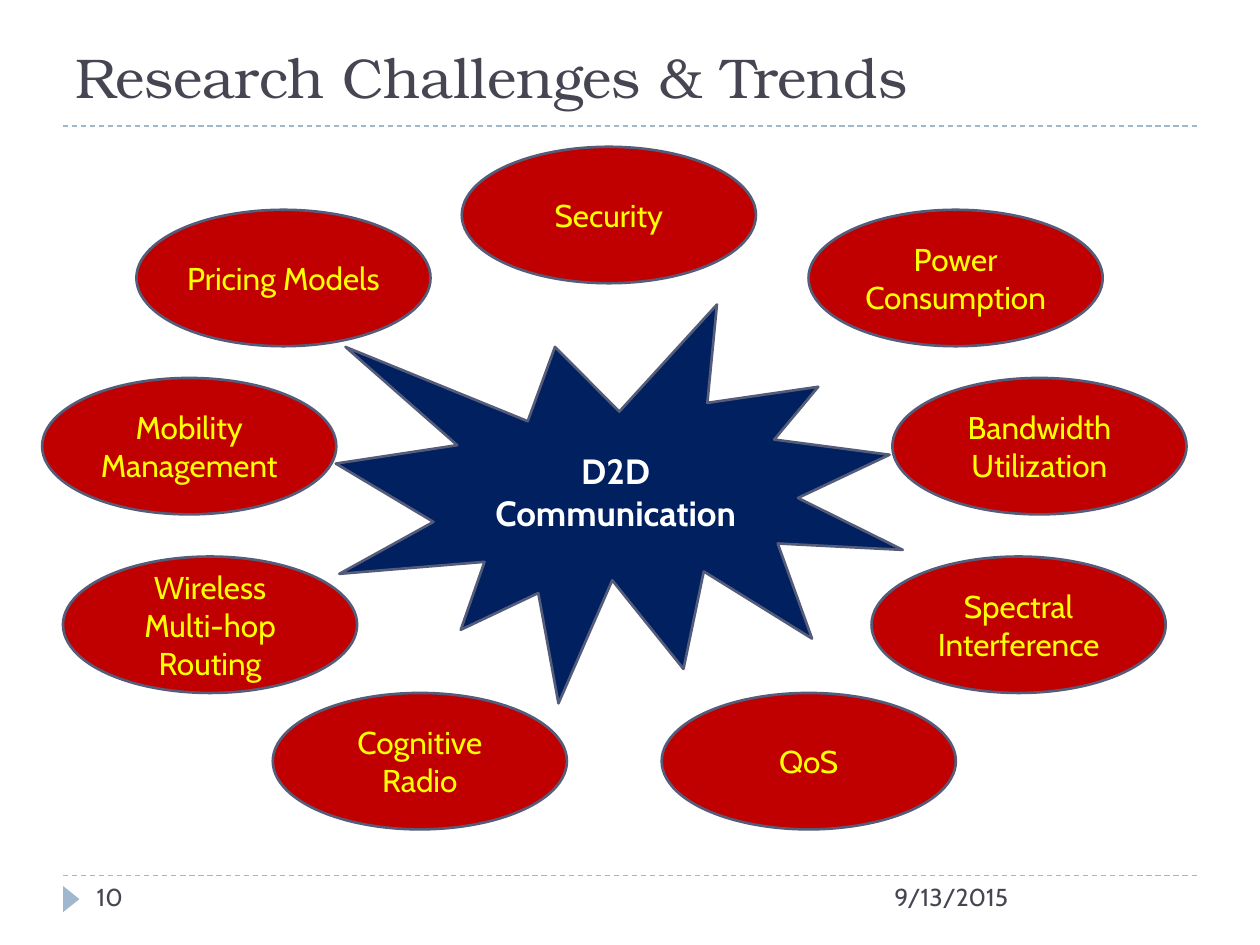
import pptx
import pptx.dml.color
import pptx.enum.dml
import pptx.enum.shapes
import pptx.enum.text
import pptx.oxml.ns
import pptx.util
from lxml import etree

Cm, Pt = pptx.util.Cm, pptx.util.Pt
SHAPE = pptx.enum.shapes.MSO_SHAPE
ANCHOR = pptx.enum.text.MSO_ANCHOR
ALIGN = pptx.enum.text.PP_ALIGN

COLORS = {
    "ink": "464653", "accent": "9FB8CD", "outline": "545C79",
    "navy": "002060", "red": "C00000", "yellow": "FFFF00", "white": "FFFFFF",
}

# Text formats
TITLE = {"name": "TeX Gyre Bonum", "size": Pt(32), "color": "ink"}
FOOTER = {"name": "Cabin", "size": Pt(14), "color": "ink"}
CENTER = {"name": "Cabin", "size": Pt(20), "bold": True, "color": "white"}
TOPIC = {"name": "Cabin", "size": Pt(18), "color": "yellow"}

OVAL_W, OVAL_H = 5.93, 2.75

# Topic, left, top, side inset (cm)
TOPICS = [
    ("Mobility Management", 0.85, 7.62, 0),
    ("Pricing Models", 2.75, 4.23, 0),
    ("Power Consumption", 16.3, 4.23, 0),
    ("Bandwidth Utilization", 17.99, 7.62, 0.25),
    ("Wireless Multi-hop Routing", 1.27, 11.22, 0.25),
    ("Cognitive Radio", 5.5, 13.97, 0.25),
    ("QoS", 13.34, 13.97, 0.25),
    ("Spectral Interference", 17.57, 11.22, 0.25),
    ("Security", 9.31, 2.96, 0),
]


def rgb(key):
    return pptx.dml.color.RGBColor.from_string(COLORS[key])


def write(sp, text, fmt, align, anchor, inset=0.25):
    tf = sp.text_frame
    frame = {"word_wrap": True, "vertical_anchor": anchor,
             "margin_left": Cm(inset), "margin_right": Cm(inset)}
    for name, value in frame.items():
        setattr(tf, name, value)
    p = tf.paragraphs[0]
    p.alignment = align
    r = p.add_run()
    r.text = text
    for name, value in fmt.items():
        if name == "color":
            r.font.color.rgb = rgb(value)
        else:
            setattr(r.font, name, value)


def add_text(s, box, text, fmt, anchor=ANCHOR.TOP):
    sp = s.shapes.add_textbox(*map(Cm, box))
    write(sp, text, fmt, ALIGN.LEFT, anchor)


def add_shape(s, kind, box, fill, line=None):
    sp = s.shapes.add_shape(kind, *map(Cm, box))
    sp.shadow.inherit = False
    sp.fill.solid()
    sp.fill.fore_color.rgb = rgb(fill)
    if line:
        sp.line.color.rgb = rgb(line)
        sp.line.width = Pt(1.5)
    else:
        sp.line.fill.background()
    return sp


def add_rule(s, y):
    cx = s.shapes.add_connector(pptx.enum.shapes.MSO_CONNECTOR.STRAIGHT,
                                Cm(1.27), Cm(y), Cm(24.13), Cm(y))
    cx.line.color.rgb = rgb("accent")
    cx.line.width = Pt(0.75)
    cx.line.dash_style = pptx.enum.dml.MSO_LINE.DASH
    spPr = cx._element.spPr
    etree.SubElement(spPr, pptx.oxml.ns.qn("a:effectLst"))


def main():
    prs = pptx.Presentation()
    prs.slide_width, prs.slide_height = Cm(25.4), Cm(19.05)
    s = prs.slides.add_slide(prs.slide_layouts[6])

    # Rules and footer
    for y in (17.65, 2.54):
        add_rule(s, y)
    marker = add_shape(s, SHAPE.ISOSCELES_TRIANGLE,
                       (1.17, 17.96, 0.53, 0.33), "accent")
    marker.rotation = 90
    add_text(s, (17.78, 17.65, 6.35, 1.02), "9/13/2015", FOOTER)
    add_text(s, (1.7, 17.65, 5.5, 1.02), "10", FOOTER)

    # Title
    add_text(s, (1.27, 0, 22.86, 2.34), "Research Challenges & Trends",
             TITLE, ANCHOR.BOTTOM)

    # Central burst
    burst = add_shape(s, SHAPE.EXPLOSION1, (6.77, 6.14, 11.43, 8.04),
                      "navy", "outline")
    write(burst, "D2D Communication", CENTER, ALIGN.CENTER, ANCHOR.MIDDLE)

    # Surrounding topics
    for text, left, top, inset in TOPICS:
        oval = add_shape(s, SHAPE.OVAL, (left, top, OVAL_W, OVAL_H),
                         "red", "outline")
        write(oval, text, TOPIC, ALIGN.CENTER, ANCHOR.MIDDLE, inset)

    prs.save("out.pptx")


if __name__ == "__main__":
    main()
